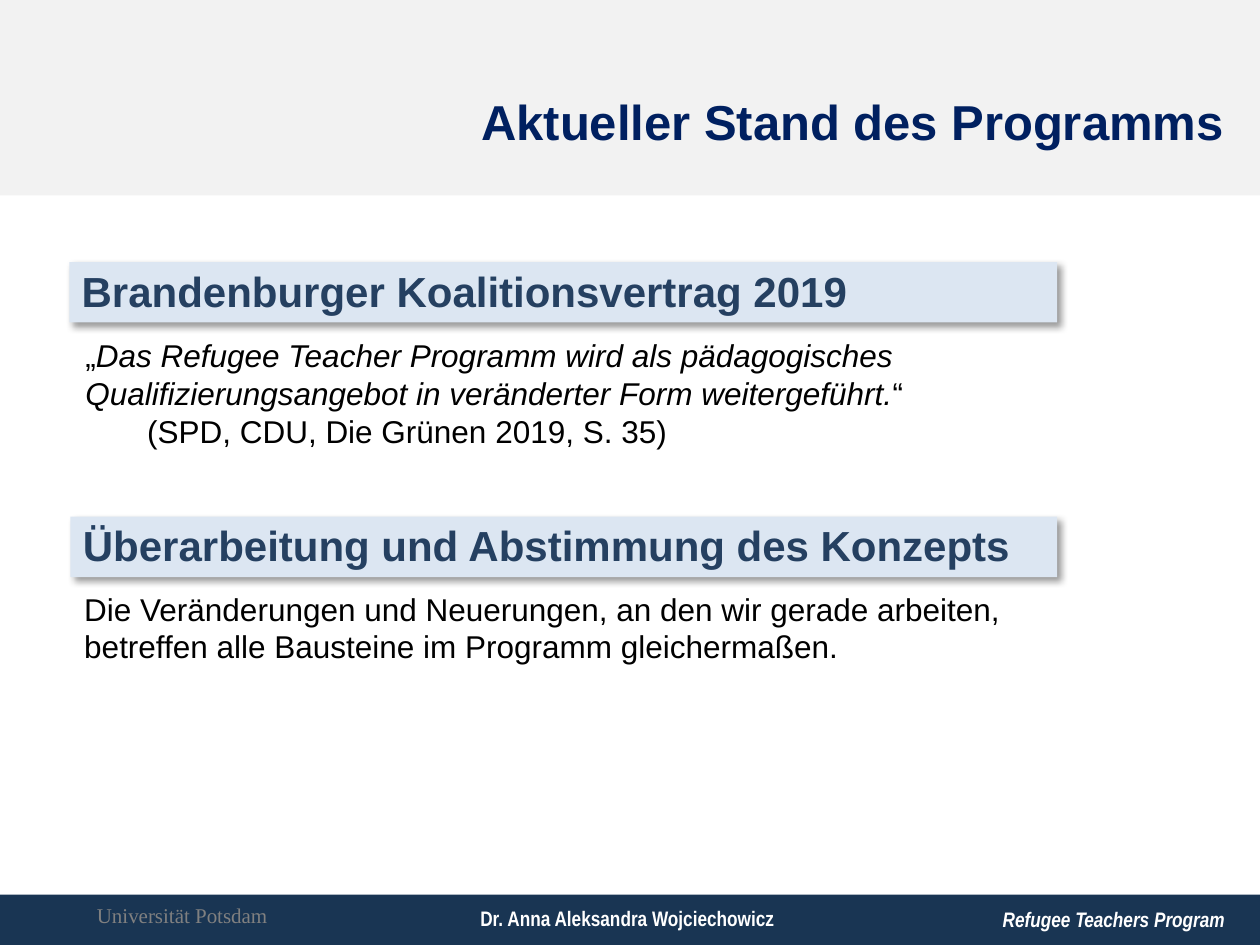
from dataclasses import dataclass

from lxml import etree
from pptx import Presentation
from pptx.dml.color import RGBColor
from pptx.enum.shapes import MSO_SHAPE as Shape
from pptx.enum.text import MSO_ANCHOR as Anchor, PP_ALIGN as Align
from pptx.oxml.ns import qn
from pptx.util import Inches, Pt

COLORS = {
    "header": "F2F2F2",
    "footer": "193553",
    "title": "002060",
    "banner": "DCE6F2",
    "heading": "254061",
    "body": "000000",
    "university": "808080",
    "footer_text": "FFFFFF",
}


@dataclass
class Box:
    left: float
    top: float
    width: float
    height: float


@dataclass
class Style:
    size: float
    color: str
    font: str = "Arial"
    bold: bool = False
    italic: bool = False


@dataclass
class Label:
    text: str
    box: Box
    style: Style
    anchor: Anchor = Anchor.MIDDLE
    align: Align = Align.LEFT


@dataclass
class Banner:
    text: str
    box: Box


BODY = Style(18, "body")
QUOTE = Style(18, "body", italic=True)
HEADING = Style(24, "heading", bold=True)
FOOTER = Style(12, "footer_text", "Arial Narrow", bold=True)
PROGRAM = Style(12, "footer_text", "Arial Narrow", bold=True, italic=True)

BANDS = [
    (Box(0, 0, 10, 1.55), "header"),
    (Box(0, 7.1, 10, 0.4), "footer"),
]

LABELS = [
    Label("Universität Potsdam", Box(0.67, 7.06, 4.41, 0.4),
          Style(12, "university", "Times New Roman")),
    Label("Refugee Teachers Program", Box(7.86, 7.15, 2.57, 0.29), PROGRAM),
    Label("Aktueller Stand des Programms", Box(2.78, 0, 7.03, 1.24),
          Style(28, "title", bold=True), Anchor.BOTTOM, Align.RIGHT),
    Label("Dr. Anna Aleksandra Wojciechowicz", Box(0, 7.14, 9.96, 0.3),
          FOOTER, align=Align.CENTER),
    Label("Die Veränderungen und Neuerungen, an den wir gerade arbeiten, "
          "betreffen alle Bausteine im Programm gleichermaßen.",
          Box(0.57, 4.63, 7.49, 0.71), BODY, Anchor.TOP),
]

BANNERS = [
    Banner("Brandenburger Koalitionsvertrag 2019", Box(0.55, 2.08, 7.84, 0.48)),
    Banner("Überarbeitung und Abstimmung des Konzepts", Box(0.56, 4.1, 7.83, 0.48)),
]


def place(box: Box) -> tuple:
    return Inches(box.left), Inches(box.top), Inches(box.width), Inches(box.height)


def format_run(run, style: Style) -> None:
    font = run.font
    font.name, font.size = style.font, Pt(style.size)
    font.bold, font.italic = style.bold, style.italic
    font.color.rgb = RGBColor.from_string(COLORS[style.color])


def add_rectangle(slide, box: Box, color: str):
    shape = slide.shapes.add_shape(Shape.RECTANGLE, *place(box))
    shape.fill.solid()
    shape.fill.fore_color.rgb = RGBColor.from_string(COLORS[color])
    shape.line.fill.background()
    shape.shadow.inherit = False
    return shape


def add_text_frame(slide, box: Box, anchor: Anchor):
    text_frame = slide.shapes.add_textbox(*place(box)).text_frame
    text_frame.word_wrap = True
    text_frame.vertical_anchor = anchor
    return text_frame


def add_label(slide, label: Label) -> None:
    text_frame = add_text_frame(slide, label.box, label.anchor)
    text_frame.text = label.text
    paragraph = text_frame.paragraphs[0]
    paragraph.alignment = label.align
    format_run(paragraph.runs[0], label.style)


def add_drop_shadow(shape) -> None:
    effects = shape._element.spPr.find(qn("a:effectLst"))
    shadow = etree.SubElement(
        effects, qn("a:outerShdw"), blurRad=str(Pt(4)), dist=str(Pt(3)),
        dir=str(45 * 60000), algn="tl", rotWithShape="0")
    color = etree.SubElement(shadow, qn("a:srgbClr"), val="000000")
    etree.SubElement(color, qn("a:alpha"), val="40000")


def add_banner(slide, banner: Banner) -> None:
    shape = add_rectangle(slide, banner.box, "banner")
    add_drop_shadow(shape)
    text_frame = shape.text_frame
    text_frame.text = banner.text
    text_frame.word_wrap = True
    text_frame.vertical_anchor = Anchor.TOP
    paragraph = text_frame.paragraphs[0]
    paragraph.alignment = Align.LEFT
    paragraph.line_spacing = Pt(27)
    format_run(paragraph.runs[0], HEADING)


def add_quote(slide) -> None:
    text_frame = add_text_frame(slide, Box(0.58, 2.62, 8, 1.01), Anchor.TOP)
    quote = text_frame.paragraphs[0]
    parts = [
        ("„", BODY),
        ("Das Refugee Teacher Programm wird als pädagogisches "
         "Qualifizierungsangebot in veränderter Form weitergeführt.", QUOTE),
        ("“", BODY),
    ]
    for text, style in parts:
        run = quote.add_run()
        run.text = text
        format_run(run, style)

    # Indented source of the quotation
    citation = text_frame.add_paragraph()
    citation.text = "(SPD, CDU, Die Grünen 2019, S. 35)"
    citation._p.get_or_add_pPr().set("marL", str(Inches(0.49)))
    format_run(citation.runs[0], BODY)


def main() -> None:
    presentation = Presentation()
    presentation.slide_width, presentation.slide_height = Inches(10), Inches(7.5)
    slide = presentation.slides.add_slide(presentation.slide_layouts[6])

    # Header and footer bands
    for box, color in BANDS:
        add_rectangle(slide, box, color)

    # Title, footer and body text
    for label in LABELS:
        add_label(slide, label)
    add_quote(slide)

    # Section headings
    for banner in BANNERS:
        add_banner(slide, banner)

    presentation.save("out.pptx")


if __name__ == "__main__":
    main()
